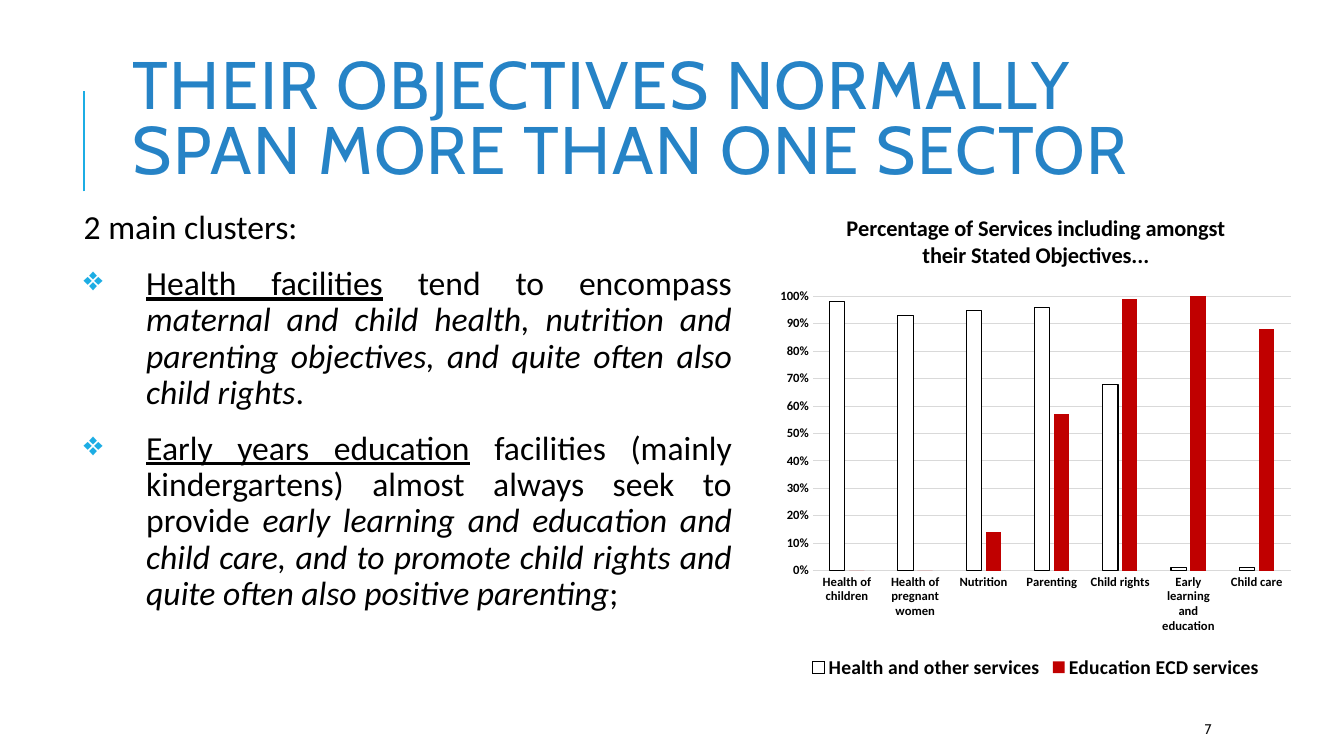
from lxml import etree
from pptx import Presentation
from pptx import util as u
from pptx.chart.data import CategoryChartData
from pptx.dml.color import RGBColor
from pptx.enum import chart as c, shapes, text
from pptx.oxml import parse_xml
from pptx.oxml.ns import nsdecls, qn


def color(value):
    return RGBColor.from_string(value)


class SlideBuilder:
    """Style and current slide; lengths are percentages of the slide's size."""

    heading_font, body_font = "Cabin", "Calibri"
    ink, blue, accent, rule, red = "000000", "2683C6", "1CADE4", "D9D9D9", "C00000"

    def __init__(self, deck):
        self.deck = deck
        self.page = deck.slides.add_slide(deck.slide_layouts[6])

    def across(self, share):
        return u.Emu(round(self.deck.slide_width * share / 100))

    def down(self, share):
        return u.Emu(round(self.deck.slide_height * share / 100))

    def area(self, left, top, width, height):
        return self.across(left), self.down(top), self.across(width), self.down(height)

    def font(self, target, size, name, value, bold=None):
        target.size, target.name, target.bold = u.Pt(size), name, bold
        target.color.rgb = color(value)

    def frame(self, area, anchor=text.MSO_ANCHOR.MIDDLE):
        frame = self.page.shapes.add_textbox(*self.area(*area)).text_frame
        frame.word_wrap = True
        frame.vertical_anchor = anchor
        return frame

    def vertical_rule(self, left, top, bottom):
        x = self.across(left)
        line = self.page.shapes.add_connector(
            shapes.MSO_CONNECTOR.STRAIGHT, x, self.down(bottom), x, self.down(top))
        line.line.color.rgb = color(self.accent)
        line.line.width = u.Pt(1.5)
        etree.SubElement(line._element.spPr, qn("a:effectLst"))

    def label(self, area, words, size, value, line_spacing=1.0, tracking=0):
        para = self.frame(area).paragraphs[0]
        para.text = words
        para.line_spacing = line_spacing
        self.font(para.font, size, self.heading_font, value)
        para.runs[0]._r.get_or_add_rPr().set("spc", str(tracking))

    def bullet(self, para):
        props = para._p.get_or_add_pPr()
        props.set("marL", str(u.Inches(0.62)))
        props.set("indent", str(-u.Inches(0.62)))
        tint = etree.SubElement(props, qn("a:buClr"))
        etree.SubElement(tint, qn("a:srgbClr")).set("val", self.accent)
        etree.SubElement(props, qn("a:buChar")).set("char", "❖")
        para.alignment = text.PP_ALIGN.JUSTIFY

    def body(self, area, intro, points):
        frame = self.frame(area, text.MSO_ANCHOR.TOP)
        frame.margin_left = frame.margin_right = u.Inches(0.05)
        frame.margin_top = frame.margin_bottom = u.Inches(0.05)
        for index, spans in enumerate([[(intro, "")], *points]):
            para = frame.add_paragraph() if index else frame.paragraphs[0]
            if index:
                self.bullet(para)
            para.line_spacing = 0.9
            para.space_before, para.space_after = u.Pt(12), u.Pt(2)
            self.font(para.font, 24, self.body_font, self.ink)
            for words, style in spans:
                span = para.add_run()
                span.text = words
                if style == "underline":
                    span.font.underline = True
                elif style == "italic":
                    span.font.italic = True

    def columns(self, area, title, categories, series, plot_box):
        data = CategoryChartData(number_format="0%")
        data.categories = categories
        for name, values, *_ in series:
            data.add_series(name, values)
        chart = self.page.shapes.add_chart(
            c.XL_CHART_TYPE.COLUMN_CLUSTERED, *self.area(*area), data).chart
        self.font(chart.font, 10, self.body_font, self.ink, True)
        chart.has_title = True
        para = chart.chart_title.text_frame.paragraphs[0]
        para.text = title
        self.font(para.font, 16, self.body_font, self.ink, True)
        chart.chart_title.include_in_layout = False
        chart.has_legend = True
        chart.legend.position = c.XL_LEGEND_POSITION.BOTTOM
        chart.legend.include_in_layout = False
        self.font(chart.legend.font, 14, self.body_font, self.ink, True)
        self.axes(chart)
        plot = chart.plots[0]
        plot.gap_width, plot.overlap, plot.vary_by_categories = 219, -27, False
        for bars, (_, _, fill, outline) in zip(plot.series, series):
            bars.invert_if_negative = False
            bars.format.fill.solid()
            bars.format.fill.fore_color.rgb = color(fill)
            if outline:
                bars.format.line.color.rgb = color(outline)
                bars.format.line.width = u.Pt(0.75)
            else:
                bars.format.line.fill.background()
        self.place_plot(chart, plot_box)

    def axes(self, chart):
        for axis in (chart.category_axis, chart.value_axis):
            axis.major_tick_mark = axis.minor_tick_mark = c.XL_TICK_MARK.NONE
            self.font(axis.tick_labels.font, 9, self.body_font, self.ink, True)
        scale = chart.value_axis
        scale.minimum_scale, scale.maximum_scale, scale.major_unit = 0, 1, 0.1
        scale.tick_labels.number_format = "0%"
        scale.tick_labels.number_format_is_linked = False
        scale.format.line.fill.background()
        for line in (chart.category_axis.format.line, scale.major_gridlines.format.line):
            line.color.rgb = color(self.rule)
            line.width = u.Pt(0.75)

    def place_plot(self, chart, plot_box):
        area = chart._chartSpace.chart.plotArea
        for old in area.findall(qn("c:layout")):
            area.remove(old)
        sizes = "".join(f'<c:{key} val="{share}"/>' for key, share in zip("xywh", plot_box))
        area.insert(0, parse_xml(
            f'<c:layout {nsdecls("c")}><c:manualLayout><c:layoutTarget val="inner"/>'
            f'<c:xMode val="edge"/><c:yMode val="edge"/>{sizes}</c:manualLayout></c:layout>'))


def main():
    deck = Presentation()
    deck.slide_width, deck.slide_height = u.Inches(13.33), u.Inches(7.5)
    slide = SlideBuilder(deck)
    slide.vertical_rule(6.23, 12, 25.33)
    slide.label((88.9, 94.4, 7.95, 4), "7", 10, "0D0D0D")
    slide.label((9.15, 5.33, 79.74, 21.87),
                "THEIR OBJECTIVES NORMALLY SPAN MORE THAN ONE SECTOR",
                48, slide.blue, line_spacing=0.8, tracking=100)
    slide.body((5.85, 27.2, 48.99, 74.4), "2 main clusters:", [
        [("Health facilities", "underline"), (" tend to encompass ", ""),
         ("maternal and child health, nutrition and parenting objectives, "
          "and quite often also child rights", "italic"), (".", "")],
        [("Early years education", "underline"),
         (" facilities (mainly kindergartens) almost always seek to provide ", ""),
         ("early learning and education and child care, and to promote child rights "
          "and quite often also positive parenting", "italic"), (";", "")],
    ])
    slide.columns(
        (57.31, 25.6, 39.53, 64.8),
        "Percentage of Services including amongst their Stated Objectives...",
        ["Health of children", "Health of pregnant women", "Nutrition", "Parenting",
         "Child rights", "Early learning and education", "Child care"],
        [("Health and other services", (0.98, 0.93, 0.95, 0.96, 0.68, 0.01, 0.01),
          "FFFFFF", slide.ink),
         ("Education ECD services", (0, 0, 0.14, 0.57, 0.99, 1, 0.88), slide.red, None)],
        plot_box=(0.08, 0.21, 0.9, 0.56))
    deck.save("out.pptx")


if __name__ == "__main__":
    main()
